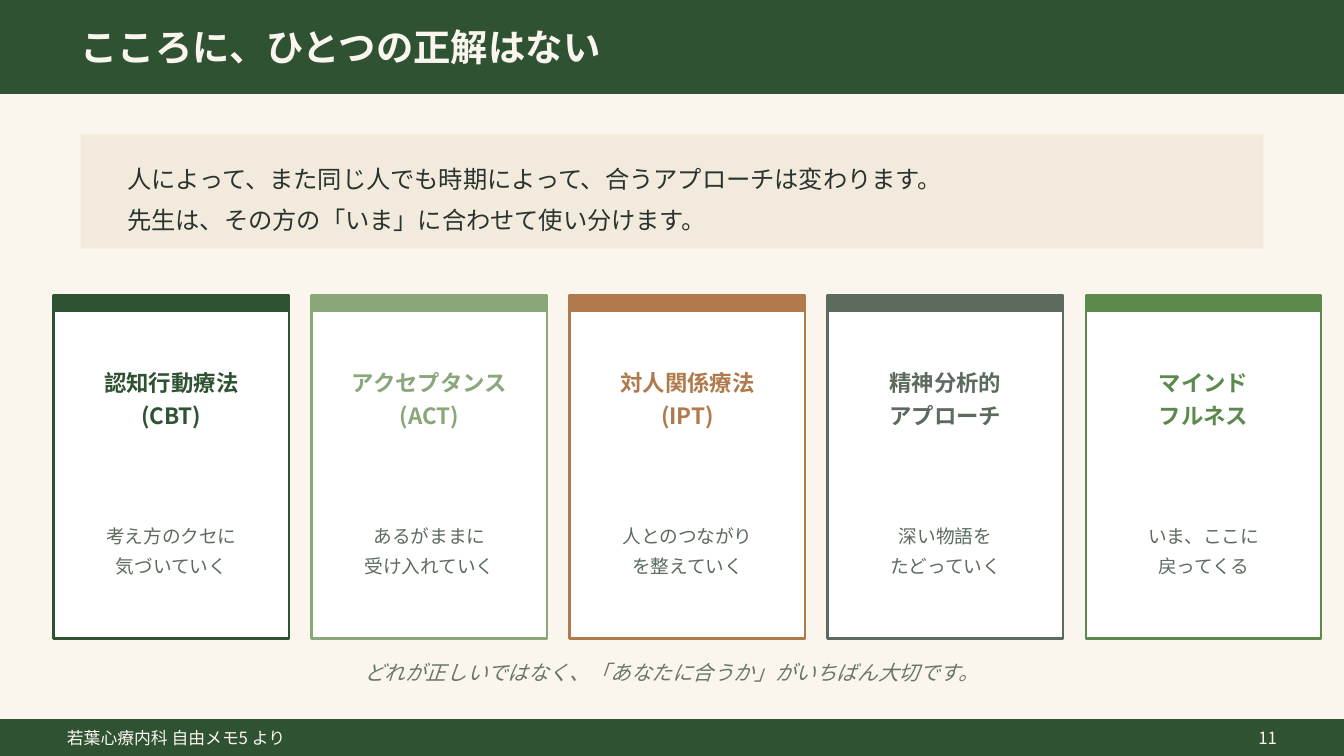
from lxml import etree
from pptx import Presentation
from pptx import util as u
from pptx.dml.color import RGBColor
from pptx.enum import shapes, text
from pptx.oxml import ns

FONT = "Noto Sans CJK JP"
GREEN, CREAM, SAND, WHITE = "2F5233", "FAF6EE", "F2EBDD", "FFFFFF"
INK, SLATE, MUTED = "2A332D", "5C6B5E", "6B7568"
LEFT, CENTER, RIGHT = text.PP_ALIGN.LEFT, text.PP_ALIGN.CENTER, text.PP_ALIGN.RIGHT

APPROACHES = [
    (GREEN, ["認知行動療法", "(CBT)"], ["考え方のクセに", "気づいていく"]),
    ("8AA77A", ["アクセプタンス", "(ACT)"], ["あるがままに", "受け入れていく"]),
    ("B07A4D", ["対人関係療法", "(IPT)"], ["人とのつながり", "を整えていく"]),
    (SLATE, ["精神分析的", "アプローチ"], ["深い物語を", "たどっていく"]),
    ("5C8A4C", ["マインド", "フルネス"], ["いま、ここに", "戻ってくる"]),
]


def color(value):
    return RGBColor.from_string(value)


def write(box, lines, size=12, ink=INK, bold=False, italic=False, align=LEFT, spacing=1.0):
    frame = box.text_frame
    frame.word_wrap = True
    frame.auto_size = text.MSO_AUTO_SIZE.NONE
    frame.vertical_anchor = text.MSO_ANCHOR.MIDDLE
    for index, line in enumerate(lines):
        para = frame.add_paragraph() if index else frame.paragraphs[0]
        para.alignment = align
        para.line_spacing = spacing
        para.space_before = u.Pt(0)
        span = para.add_run()
        span.text = line
        font = span.font
        font.name, font.size, font.bold, font.italic = FONT, u.Pt(size), bold, italic
        font.color.rgb = color(ink)
        east_asian = etree.SubElement(font._element, ns.qn("a:ea"))
        east_asian.set("typeface", FONT)


class Painter:
    def __init__(self, page):
        self.page = page
        page.background.fill.solid()
        page.background.fill.fore_color.rgb = color(CREAM)

    def rect(self, x, y, width, height, fill, line=None):
        box = self.page.shapes.add_shape(
            shapes.MSO_SHAPE.RECTANGLE, *map(u.Inches, (x, y, width, height)))
        box.shadow.inherit = False
        box.fill.solid()
        box.fill.fore_color.rgb = color(fill)
        if line:
            box.line.color.rgb = color(line)
            box.line.width = u.Pt(1.5)
        else:
            box.line.fill.background()
        return box

    def label(self, x, y, width, height, lines, **style):
        box = self.page.shapes.add_textbox(*map(u.Inches, (x, y, width, height)))
        write(box, lines, **style)

    def title(self, x, y, width, height, line, **style):
        box = self.page.shapes.title
        box.left, box.top, box.width, box.height = map(u.Inches, (x, y, width, height))
        write(box, [line], **style)
        band = self.rect(0, y, 10, height, GREEN)
        box.element.addprevious(band.element)

    def card(self, x, accent, name, summary):
        self.rect(x, 2.2, 1.75, 2.55, WHITE, line=accent)
        self.rect(x, 2.2, 1.75, 0.12, accent)
        self.label(x + 0.05, 2.4, 1.65, 1.1, name,
                   ink=accent, bold=True, align=CENTER, spacing=1.2)
        self.label(x + 0.1, 3.5, 1.55, 1.15, summary,
                   size=10, ink=SLATE, align=CENTER, spacing=1.3)


def main():
    deck = Presentation()
    deck.slide_width = u.Inches(10)
    deck.slide_height = u.Inches(10 * 9 / 16)
    painter = Painter(deck.slides.add_slide(deck.slide_layouts[5]))

    painter.title(0.5, 0, 9, 0.7, "こころに、ひとつの正解はない", size=20, ink=CREAM, bold=True)
    painter.rect(0.6, 1, 8.8, 0.85, SAND)
    painter.label(0.85, 1.05, 8.3, 0.78, [
        "人によって、また同じ人でも時期によって、合うアプローチは変わります。",
        "先生は、その方の「いま」に合わせて使い分けます。",
    ], size=13, spacing=1.4)

    for index, approach in enumerate(APPROACHES):
        painter.card(0.4 + 1.92 * index, *approach)

    painter.label(0.6, 4.85, 8.8, 0.3, ["どれが正しいではなく、「あなたに合うか」がいちばん大切です。"],
                  size=11, ink=MUTED, italic=True, align=CENTER)
    painter.rect(0, 5.35, 10, 0.28, GREEN)
    painter.label(0.4, 5.35, 6, 0.28, ["若葉心療内科 自由メモ5 より"], size=9, ink=CREAM)
    painter.label(9, 5.35, 0.6, 0.28, ["11"], size=9, ink=CREAM, align=RIGHT)
    deck.save("out.pptx")


if __name__ == "__main__":
    main()
